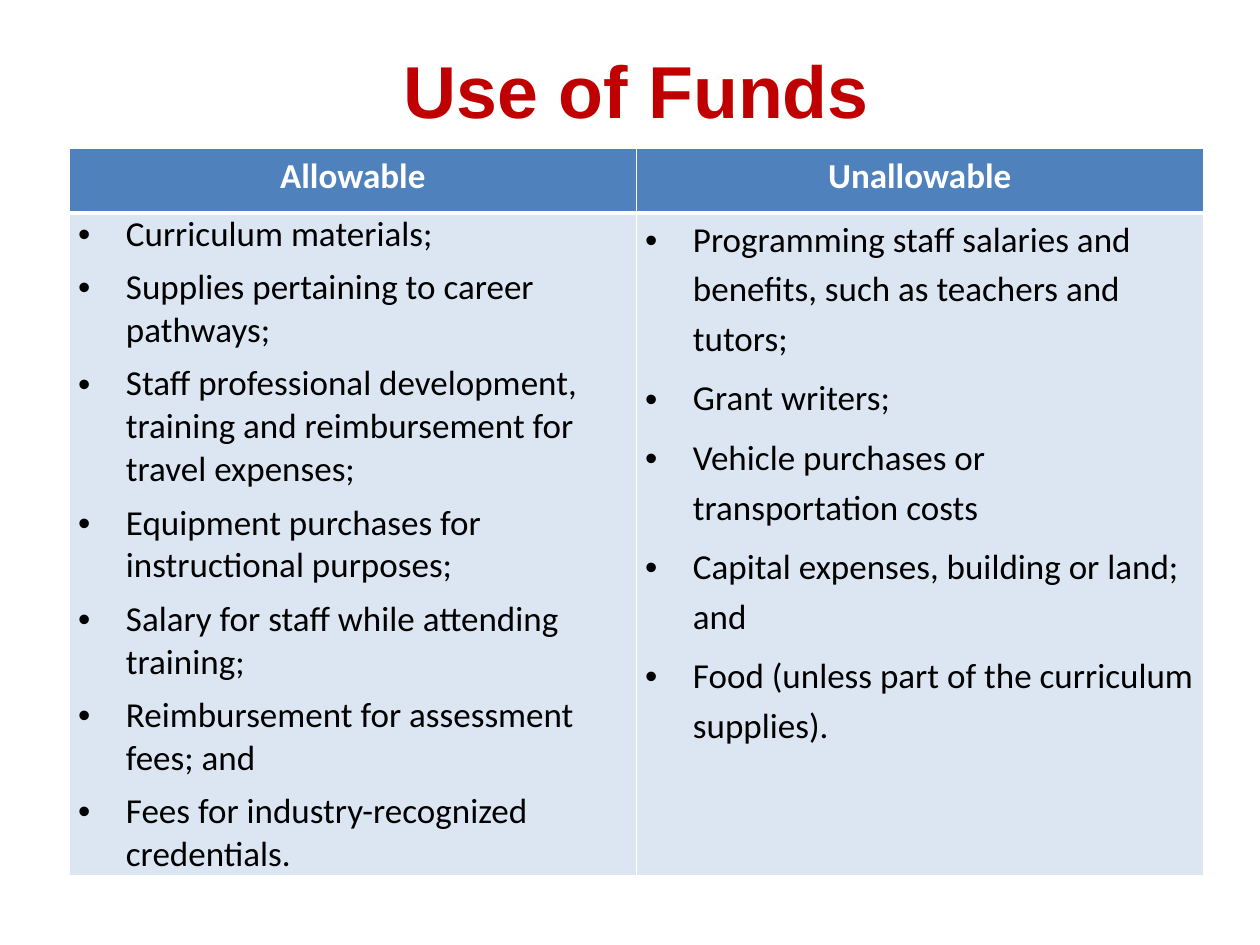
from dataclasses import dataclass

from lxml.etree import SubElement
from pptx import Presentation
from pptx.dml.color import RGBColor
from pptx.enum.text import MSO_ANCHOR, MSO_AUTO_SIZE, PP_ALIGN
from pptx.oxml import parse_xml
from pptx.oxml.ns import nsdecls, qn
from pptx.util import Inches, Pt


@dataclass(frozen=True)
class Theme:
    title_font: str = "Arial"
    table_font: str = "Calibri"
    title_size: int = 42
    table_size: int = 20
    title_color: str = "C00000"
    header_fill: str = "4F81BD"
    body_fill: str = "DCE6F2"
    light: str = "FFFFFF"
    dark: str = "000000"


@dataclass(frozen=True)
class Grid:
    cell: float = 0.1
    columns: int = 100
    rows: int = 75

    def span(self, count: float) -> int:
        return Inches(count * self.cell)


@dataclass(frozen=True)
class FundsColumn:
    heading: str
    items: tuple[str, ...]
    line_spacing: float | None = None


THEME = Theme()
GRID = Grid()
MARGIN = 5.5
CONTENT_WIDTH = 90
TITLE_TOP, TITLE_HEIGHT = 3.6, 28.3
TABLE_TOP, HEADER_HEIGHT, BODY_HEIGHT = 11.8, 5.1, 51.7
CELL_INSET = 0.7
BULLET_INDENT = 3.8

FUNDS_COLUMNS = (
    FundsColumn("Allowable", (
        "Curriculum materials;",
        "Supplies pertaining to career pathways;",
        "Staff professional development, training and reimbursement for travel expenses;",
        "Equipment purchases for instructional purposes;",
        "Salary for staff while attending training;",
        "Reimbursement for assessment fees; and",
        "Fees for industry-recognized credentials.",
    )),
    FundsColumn("Unallowable", (
        "Programming staff salaries and benefits, such as teachers and tutors;",
        "Grant writers;",
        "Vehicle purchases or transportation costs",
        "Capital expenses, building or land; and",
        "Food (unless part of the curriculum supplies).",
    ), 1.15),
)


def add_span(para, text: str, font: str, size: int, color: str, bold: bool) -> None:
    span = para.add_run()
    span.text = text
    span.font.name = font
    span.font.size = Pt(size)
    span.font.bold = bold
    span.font.color.rgb = RGBColor.from_string(color)


def add_title(page, text: str) -> None:
    title = page.shapes.title
    title.left, title.top = GRID.span(MARGIN), GRID.span(TITLE_TOP)
    title.width, title.height = GRID.span(CONTENT_WIDTH), GRID.span(TITLE_HEIGHT)
    frame = title.text_frame
    frame.margin_left = frame.margin_right = frame.margin_top = frame.margin_bottom = 0
    frame.vertical_anchor = MSO_ANCHOR.TOP
    frame.auto_size = MSO_AUTO_SIZE.NONE
    frame.word_wrap = True
    para = frame.paragraphs[0]
    para.alignment = PP_ALIGN.CENTER
    add_span(para, text, THEME.title_font, THEME.title_size, THEME.title_color, True)


def style_cell(cell, fill: str, bottom_width: int) -> None:
    cell.margin_left = cell.margin_right = GRID.span(CELL_INSET)
    cell.margin_top = cell.margin_bottom = 0
    cell.fill.solid()
    cell.fill.fore_color.rgb = RGBColor.from_string(fill)
    properties = cell._tc.get_or_add_tcPr()
    for index, side in enumerate("LRTB"):
        width = Pt(bottom_width if side == "B" else 1)
        properties.insert(index, parse_xml(
            f'<a:ln{side} {nsdecls("a")} w="{width}"><a:solidFill>'
            f'<a:srgbClr val="{THEME.light}"/></a:solidFill></a:ln{side}>'))


def add_bullet(para) -> None:
    properties = para._p.get_or_add_pPr()
    indent = GRID.span(BULLET_INDENT)
    properties.set("marL", str(indent))
    properties.set("indent", str(-indent))
    SubElement(properties, qn("a:buFont")).set("typeface", THEME.title_font)
    SubElement(properties, qn("a:buChar")).set("char", "•")


def fill_header(cell, heading: str) -> None:
    style_cell(cell, THEME.header_fill, 3)
    para = cell.text_frame.paragraphs[0]
    para.alignment = PP_ALIGN.CENTER
    para.line_spacing = 1.15
    para.space_after = Pt(12)
    add_span(para, heading, THEME.table_font, THEME.table_size, THEME.light, True)


def fill_body(cell, column: FundsColumn) -> None:
    style_cell(cell, THEME.body_fill, 1)
    frame = cell.text_frame
    for index, item in enumerate(column.items):
        para = frame.add_paragraph() if index else frame.paragraphs[0]
        add_bullet(para)
        para.line_spacing = column.line_spacing
        para.space_after = Pt(6)
        add_span(para, item, THEME.table_font, THEME.table_size, THEME.dark, False)


def add_funds_table(page, columns: tuple[FundsColumn, ...]) -> None:
    table = page.shapes.add_table(
        2, len(columns), GRID.span(MARGIN), GRID.span(TABLE_TOP),
        GRID.span(CONTENT_WIDTH), GRID.span(HEADER_HEIGHT + BODY_HEIGHT)).table
    table.horz_banding = False
    table.rows[0].height = GRID.span(HEADER_HEIGHT)
    table.rows[1].height = GRID.span(BODY_HEIGHT)
    for index, column in enumerate(columns):
        table.columns[index].width = GRID.span(CONTENT_WIDTH / len(columns))
        fill_header(table.cell(0, index), column.heading)
        fill_body(table.cell(1, index), column)


def main() -> None:
    deck = Presentation()
    deck.slide_width = GRID.span(GRID.columns)
    deck.slide_height = GRID.span(GRID.rows)
    page = deck.slides.add_slide(deck.slide_layouts.get_by_name("Title Only"))
    add_title(page, "Use of Funds")
    add_funds_table(page, FUNDS_COLUMNS)
    deck.save("out.pptx")


if __name__ == "__main__":
    main()
